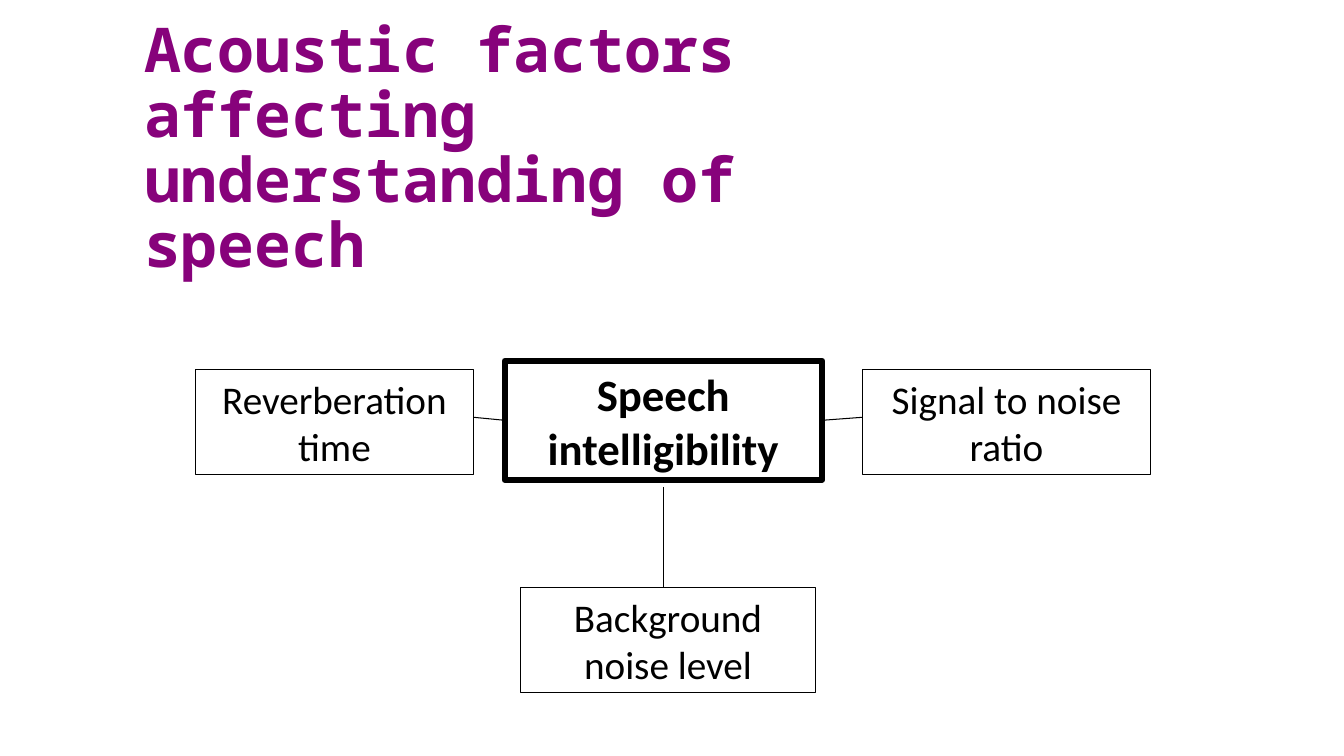
from pptx import Presentation
from pptx.dml.color import RGBColor
from pptx.enum.shapes import MSO_CONNECTOR, MSO_SHAPE
from pptx.enum.text import MSO_ANCHOR, MSO_AUTO_SIZE, PP_ALIGN
from pptx.oxml.ns import qn
from pptx.util import Inches, Pt
from lxml.etree import SubElement

COLORS = {"title": "87027B", "ink": "000000"}


def rgb(name):
    return RGBColor.from_string(COLORS[name])


def write(tf, text, size, color="ink", font="Calibri", bold=False,
          align=PP_ALIGN.CENTER, spacing=1.0):
    tf.word_wrap = True
    tf.vertical_anchor = MSO_ANCHOR.MIDDLE
    p = tf.paragraphs[0]
    p.alignment = align
    p.line_spacing = spacing
    r = p.add_run()
    r.text = text
    r.font.size = Pt(size)
    r.font.name = font
    r.font.bold = bold
    r.font.color.rgb = rgb(color)


class Diagram:
    def __init__(self, s, thin=0.75):
        self.s = s
        self.thin = thin

    def title(self, text, x, y, w, h):
        sp = self.s.shapes.title
        sp.left, sp.top, sp.width, sp.height = map(Inches, (x, y, w, h))
        tf = sp.text_frame
        tf.auto_size = MSO_AUTO_SIZE.NONE
        tf.margin_left = tf.margin_right = Inches(0.13)
        tf.margin_top = tf.margin_bottom = Inches(0.07)
        write(tf, text, 44, color="title", font="Noto Sans Mono", bold=True,
              align=PP_ALIGN.LEFT, spacing=0.88)

    def box(self, text, x, y, w, h=1.04, size=28, bold=False, line=None):
        sp = self.s.shapes.add_shape(MSO_SHAPE.RECTANGLE,
                                     *map(Inches, (x, y, w, h)))
        sp.shadow.inherit = False
        sp.fill.background()
        sp.line.color.rgb = rgb("ink")
        sp.line.width = Pt(line or self.thin)
        write(sp.text_frame, text, size, bold=bold)
        sp.text_frame.auto_size = MSO_AUTO_SIZE.SHAPE_TO_FIT_TEXT
        return sp

    def link(self, x1, y1, x2, y2):
        c = self.s.shapes.add_connector(MSO_CONNECTOR.STRAIGHT,
                                        *map(Inches, (x1, y1, x2, y2)))
        c.line.color.rgb = rgb("ink")
        c.line.width = Pt(self.thin)
        SubElement(c._element.spPr, qn("a:effectLst"))
        return c


def main():
    prs = Presentation()
    prs.slide_width, prs.slide_height = Inches(13.34), Inches(7.5)
    d = Diagram(prs.slides.add_slide(prs.slide_layouts[5]))

    d.title("Acoustic factors affecting understanding of speech",
            1.3, 0.99, 7.1, 1)
    center = d.box("Speech intelligibility", 5.01, 3.58, 3.15, 1.18,
                   size=32, bold=True, line=4.5)
    for text, x, y, w in (("Reverberation time", 1.94, 3.67, 2.76),
                          ("Signal to noise ratio", 8.56, 3.67, 2.86),
                          ("Background noise level", 5.17, 5.83, 2.92)):
        d.box(text, x, y, w)

    d.link(4.7, 4.14, 5.01, 4.17).end_connect(center, 1)
    d.link(6.59, 4.83, 6.59, 5.83)
    d.link(8.16, 4.17, 8.56, 4.14).begin_connect(center, 3)
    prs.save("out.pptx")


if __name__ == "__main__":
    main()
